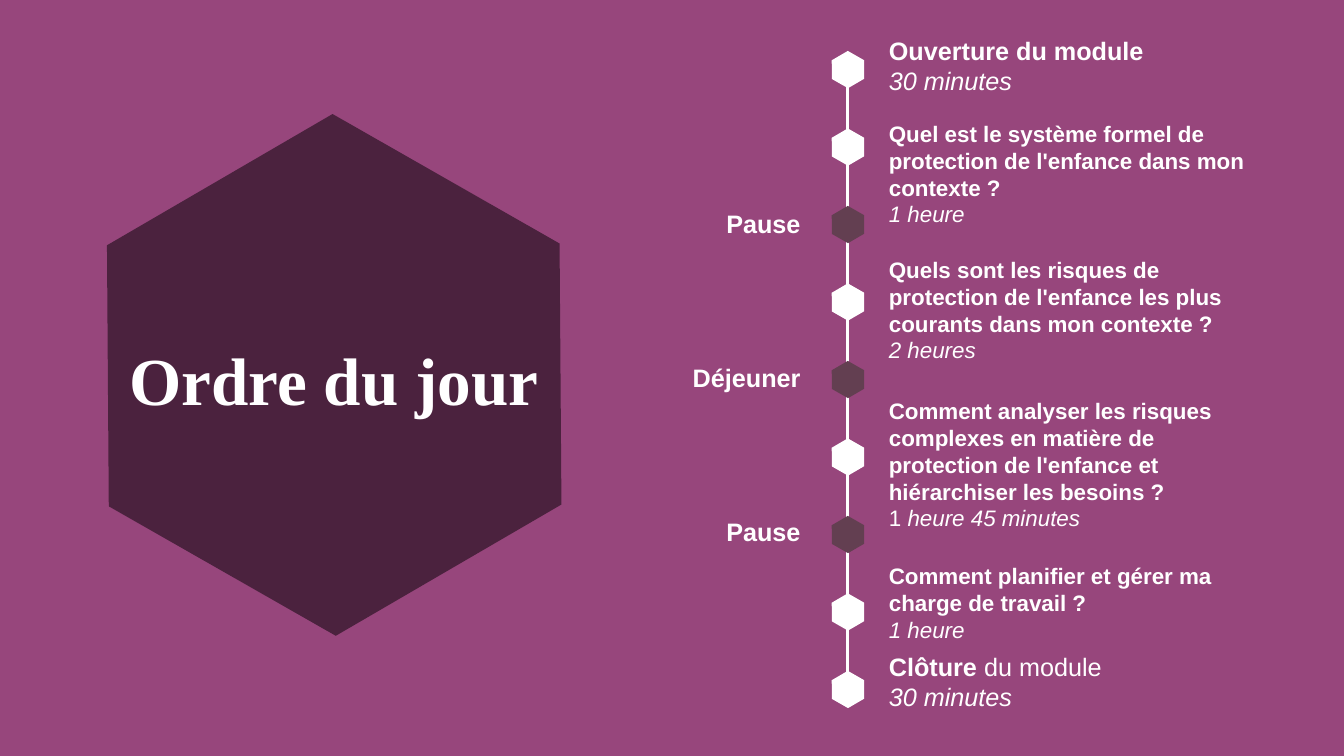
from pptx import Presentation
from pptx.dml.color import RGBColor
from pptx.enum.shapes import MSO_CONNECTOR, MSO_SHAPE
from pptx.enum.text import MSO_ANCHOR, MSO_AUTO_SIZE, PP_ALIGN
from pptx.oxml.ns import qn
from pptx.util import Inches, Pt
from lxml.etree import SubElement

HUES = {"back": "97467C", "panel": "4B223E", "white": "FFFFFF", "rest": "633F51"}
WIDE, HIGH = Inches(13.333), Inches(7.5)

MARKS = 9
BREAKS = {2: "Pause", 4: "Déjeuner", 6: "Pause"}
ITEMS = [
    (4, 28.28, 9.47, 18, [[("Ouverture du module", "b")], [("30 minutes", "i")]]),
    (15.2, 31.8, 16.13, 16, [
        [("Quel est le système formel de protection de l'enfance dans mon contexte ?", "b")],
        [("1 heure", "i")]]),
    (33.2, 28.28, 16.13, 16, [
        [("Quels sont les risques de protection de l'enfance les plus courants "
          "dans mon contexte ?", "b")],
        [("2 heures", "i")]]),
    (51.87, 28.28, 19.73, 16, [
        [("Comment analyser les risques complexes en matière de protection de "
          "l'enfance et hiérarchiser les besoins ?", "b")],
        [("1 ", ""), ("heure 45 minutes", "i")]]),
    (73.73, 28.28, 12.53, 16, [
        [("Comment planifier et gérer ma charge de travail ?", "b")],
        [("1 heure", "i")]]),
    (85.47, 26.48, 9.47, 18, [
        [("Clôture", "b"), (" du module", "")], [("30 minutes", "i")]]),
]


def hue(name):
    return RGBColor.from_string(HUES[name])


def area(left, top, width, height):
    return (round(WIDE * left / 100), round(HIGH * top / 100),
            round(WIDE * width / 100), round(HIGH * height / 100))


def write(frame, paras, size=18, font="Arial", color="white",
          align=PP_ALIGN.LEFT, space=1, anchor=MSO_ANCHOR.TOP,
          fit=MSO_AUTO_SIZE.SHAPE_TO_FIT_TEXT):
    frame.word_wrap = True
    frame.auto_size = fit
    frame.vertical_anchor = anchor
    for rank, parts in enumerate(paras):
        para = frame.add_paragraph() if rank else frame.paragraphs[0]
        para.alignment = align
        para.line_spacing = space
        for text, style in parts:
            run = para.add_run()
            run.text = text
            run.font.size = Pt(size)
            run.font.name = font
            run.font.color.rgb = hue(color)
            run.font.bold = "b" in style
            run.font.italic = "i" in style


def label(slide, place, paras, **style):
    write(slide.shapes.add_textbox(*area(*place)).text_frame, paras, **style)


def hexa(slide, place, color):
    shape = slide.shapes.add_shape(MSO_SHAPE.HEXAGON, *area(*place))
    shape.adjustments[0] = 0.29
    shape.adjustments[1] = 1.155
    shape.rotation = 29.7
    shape.shadow.inherit = False
    shape.fill.solid()
    shape.fill.fore_color.rgb = hue(color)
    shape.line.fill.background()


def rail(slide, left, top, height):
    x, y, _, drop = area(left, top, 0, height)
    line = slide.shapes.add_connector(MSO_CONNECTOR.STRAIGHT, x, y, x, y + drop)
    line.line.color.rgb = hue("white")
    line.line.width = Pt(2.25)
    SubElement(line.element.spPr, qn("a:effectLst"))


def head(slide, place, text):
    title = slide.shapes.title
    title.left, title.top, title.width, title.height = area(*place)
    write(title.text_frame, [[(text, "b")]], size=48, font="Times New Roman",
          align=PP_ALIGN.CENTER, space=0.9, anchor=MSO_ANCHOR.MIDDLE,
          fit=MSO_AUTO_SIZE.NONE)
    title.element.getparent().append(title.element)


def main():
    deck = Presentation()
    deck.slide_width, deck.slide_height = WIDE, HIGH
    slide = deck.slides.add_slide(deck.slide_layouts[5])
    slide.background.fill.solid()
    slide.background.fill.fore_color.rgb = hue("back")

    hexa(slide, (5.4, 19.73, 38.93, 59.73), "panel")
    head(slide, (8.4, 46.67, 32.93, 8.13), "Ordre du jour")

    rail(slide, 63.08, 8.27, 82.93)
    for step in range(MARKS):
        hexa(slide, (61.7, 7.07 + 10.25 * step, 2.78, 4.27),
             "rest" if step in BREAKS else "white")
    for rank, text in enumerate(BREAKS.values()):
        label(slide, (49.2, 26.93 + 20.35 * rank, 11.1, 5.33), [[(text, "b")]],
              align=PP_ALIGN.RIGHT)
    for top, width, height, size, paras in ITEMS:
        label(slide, (65.4, top, width, height), paras, size=size)

    deck.save("out.pptx")


if __name__ == "__main__":
    main()
